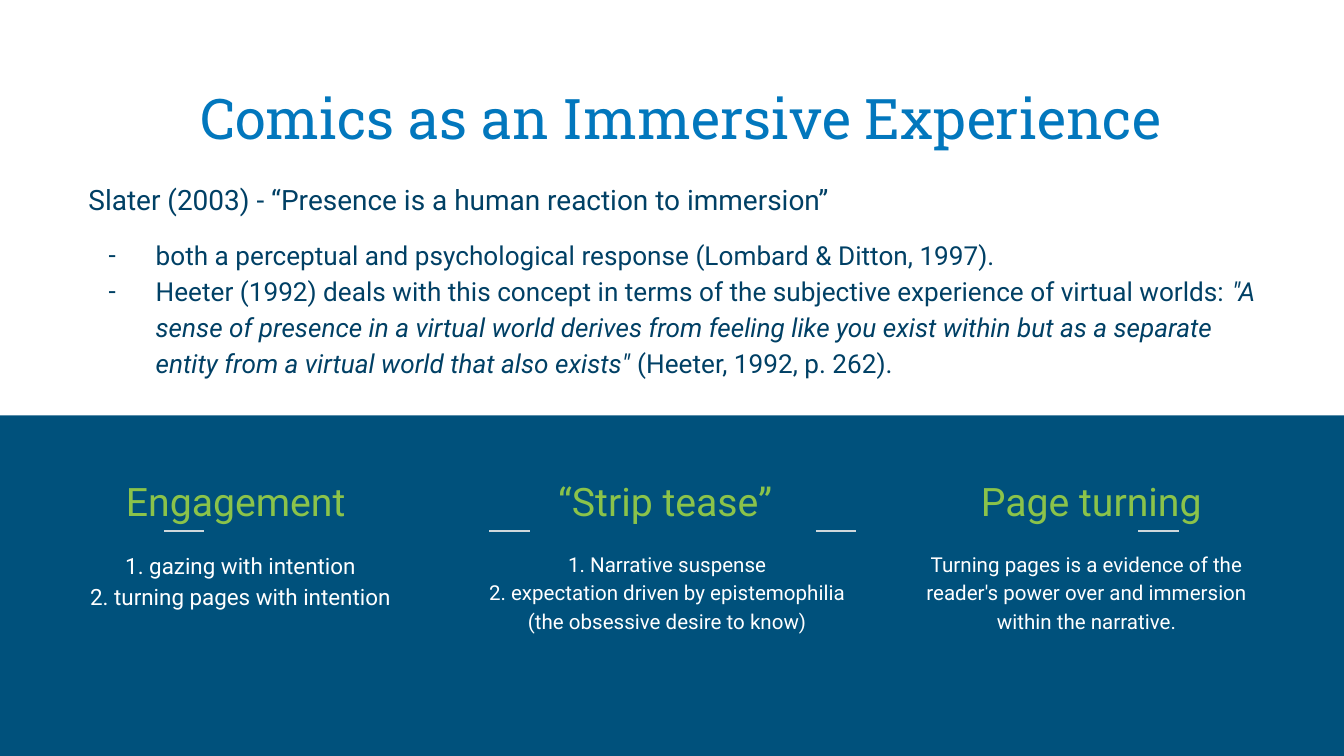
from lxml.etree import SubElement
from pptx import Presentation
from pptx.dml.color import RGBColor
from pptx.enum.shapes import MSO_CONNECTOR as Connector, MSO_SHAPE as Shape
from pptx.enum.text import MSO_ANCHOR as Anchor, MSO_AUTO_SIZE as AutoSize, PP_ALIGN as Align
from pptx.oxml.ns import qn
from pptx.util import Inches, Pt

WHITE, NAVY, INK = "FFFFFF", "00517C", "004065"
BLUE, GREEN, GREY = "0277BD", "8BC34A", "CFD8DC"
HEADING_TOP, RULE_TOP, DETAIL_TOP = 3.4, 3.95, 3.98
RULE_STARTS = (1.22, 3.64, 6.07, 8.47)
RULE_LENGTH = 0.3

COLUMNS = [
    ("Engagement ", 0.6, 0.43, 2.72, 12,
     ["1. gazing with intention", "2. turning pages with intention"]),
    ("“Strip tease”", 3.76, 3.46, 3.01, 11,
     ["1. Narrative suspense",
      "2. expectation driven by epistemophilia (the obsessive desire to know)"]),
    ("Page turning", 6.93, 6.69, 2.79, 11,
     ["Turning pages is a evidence of the reader's power over and immersion "
      "within the narrative."]),
]
PRESENCE = "Slater (2003) - “Presence is a human reaction to immersion”"
RESPONSE = "both a perceptual and psychological response (Lombard & Ditton, 1997)."
HEETER = [
    ("Heeter (1992) deals with this concept in terms of the subjective experience "
     "of virtual worlds: ", False),
    ("\"A sense of presence in a virtual world derives from feeling like you exist "
     "within but as a separate entity from a virtual world that also exists\" ", True),
    ("(Heeter, 1992, p. 262).", False),
]


def rgb(value):
    return RGBColor.from_string(value)


def set_frame(frame, anchor=Anchor.TOP):
    frame.word_wrap = True
    frame.auto_size = AutoSize.NONE
    frame.vertical_anchor = anchor
    frame.margin_left = frame.margin_right = Inches(0.1)
    frame.margin_top = frame.margin_bottom = Inches(0.1)


def style(paragraph, size, color, font="Roboto", align=Align.LEFT, spacing=1.15, after=0):
    paragraph.font.name = font
    paragraph.font.size = Pt(size)
    paragraph.font.color.rgb = rgb(color)
    paragraph.alignment = align
    paragraph.line_spacing = spacing
    paragraph.space_after = Pt(after)


def add_text(slide, left, top, width, height):
    box = slide.shapes.add_textbox(Inches(left), Inches(top), Inches(width), Inches(height))
    set_frame(box.text_frame)
    return box.text_frame


def add_centred(slide, left, top, width, height, lines, size, color):
    frame = add_text(slide, left, top, width, height)
    frame.text = "\n".join(lines)
    for paragraph in frame.paragraphs:
        style(paragraph, size, color, align=Align.CENTER)
    frame.paragraphs[-1].space_after = Pt(16)


def add_dash_item(frame, runs):
    paragraph = frame.add_paragraph()
    for text, italic in runs:
        run = paragraph.add_run()
        run.text = text
        run.font.italic = italic
    style(paragraph, 14, INK)
    properties = paragraph._p.get_or_add_pPr()
    properties.set("marL", str(Inches(0.5)))
    properties.set("indent", str(Inches(-0.35)))
    bullet_color = SubElement(properties, qn("a:buClr"))
    SubElement(bullet_color, qn("a:srgbClr"), val=INK)
    SubElement(properties, qn("a:buSzPts"), val="1400")
    SubElement(properties, qn("a:buFont"), typeface="Roboto")
    SubElement(properties, qn("a:buChar"), char="-")
    properties.append(properties.find(qn("a:defRPr")))


def add_rule(slide, left):
    rule = slide.shapes.add_connector(
        Connector.STRAIGHT, Inches(left), Inches(RULE_TOP),
        Inches(left + RULE_LENGTH), Inches(RULE_TOP))
    rule.line.color.rgb = rgb(GREY)
    rule.line.width = Pt(0.75)
    SubElement(rule.element.spPr, qn("a:effectLst"))


def add_upper_panel(slide):
    panel = slide.shapes.add_shape(Shape.RECTANGLE, 0, 0, Inches(10.02), Inches(3.09))
    panel.shadow.inherit = False
    panel.fill.solid()
    panel.fill.fore_color.rgb = rgb(WHITE)
    panel.line.fill.background()
    return panel


def set_title(slide, panel):
    title = slide.shapes.title
    title.left, title.top = Inches(0.33), Inches(0.42)
    title.width, title.height = Inches(9.48), Inches(0.8)
    title.text_frame.text = "Comics as an Immersive Experience"
    set_frame(title.text_frame, Anchor.BOTTOM)
    style(title.text_frame.paragraphs[0], 30, BLUE, "Roboto Slab", Align.CENTER, 1.0)
    panel.element.addnext(title.element)


def add_presence_text(slide):
    frame = add_text(slide, 0.56, 1.22, 8.92, 1.88)
    frame.text = PRESENCE
    style(frame.paragraphs[0], 15, INK, after=10)
    add_dash_item(frame, [(RESPONSE, False)])
    add_dash_item(frame, HEETER)


def main():
    deck = Presentation()
    deck.slide_width = Inches(10)
    deck.slide_height = deck.slide_width * 9 // 16
    slide = deck.slides.add_slide(deck.slide_layouts[5])
    slide.background.fill.solid()
    slide.background.fill.fore_color.rgb = rgb(NAVY)
    set_title(slide, add_upper_panel(slide))
    for heading, heading_left, detail_left, detail_width, size, lines in COLUMNS:
        add_centred(slide, heading_left, HEADING_TOP, 2.38, 0.48, [heading], 21, GREEN)
        add_centred(slide, detail_left, DETAIL_TOP, detail_width, 1.26, lines, size, WHITE)
    for left in RULE_STARTS:
        add_rule(slide, left)
    add_presence_text(slide)
    deck.save("out.pptx")


if __name__ == "__main__":
    main()
